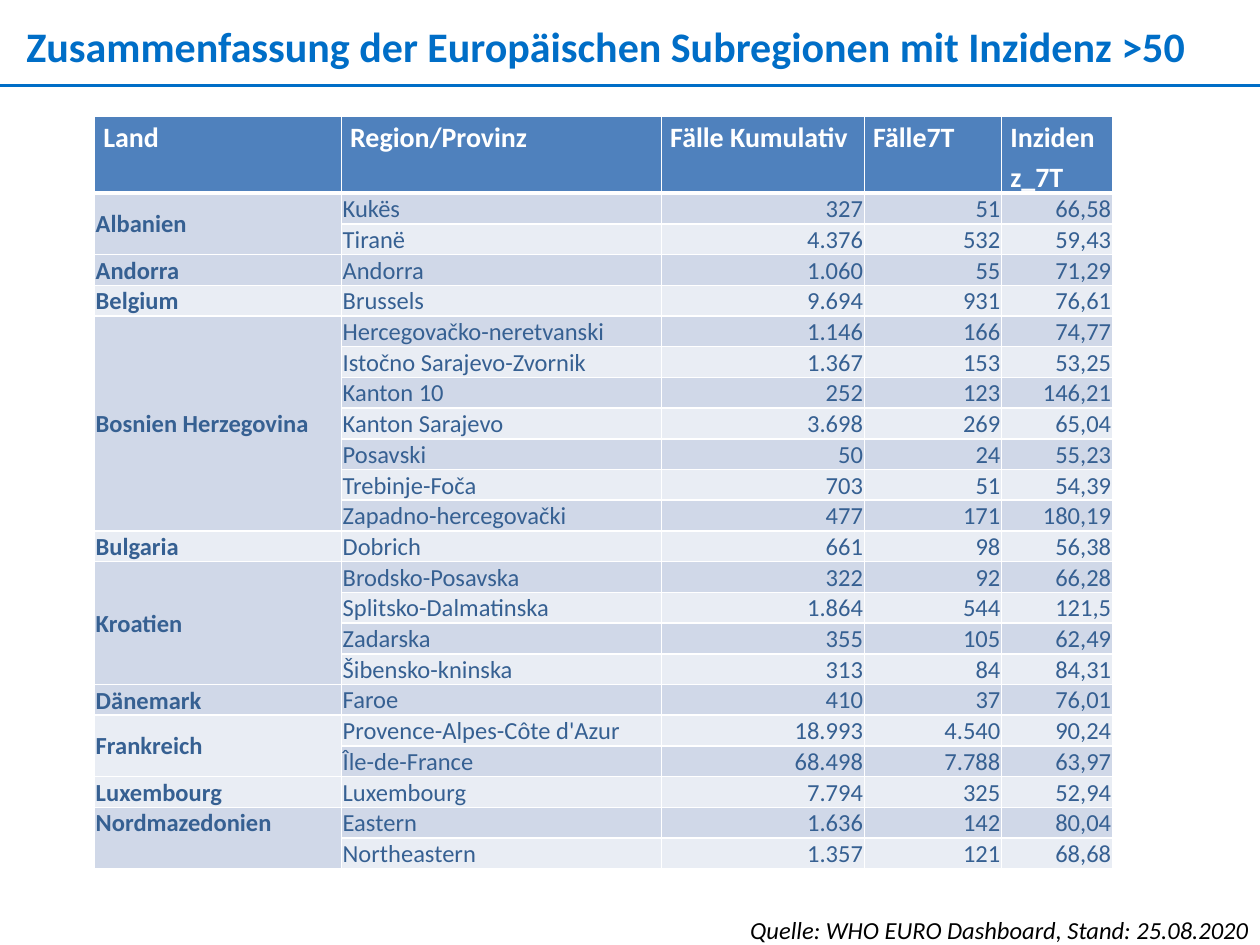
"""Build the slide listing European subregions with an incidence above 50."""
from lxml.etree import SubElement
from pptx import Presentation
from pptx.dml.color import RGBColor
from pptx.enum.shapes import MSO_CONNECTOR
from pptx.enum.text import MSO_ANCHOR, PP_ALIGN
from pptx.oxml import parse_xml
from pptx.oxml.ns import nsdecls, qn
from pptx.util import Inches, Pt

BLUE = RGBColor(0x00, 0x6E, 0xC7)
BLACK = RGBColor(0x00, 0x00, 0x00)
WHITE = RGBColor(0xFF, 0xFF, 0xFF)
HEAD = RGBColor(0x4F, 0x81, 0xBD)
INK = RGBColor(0x36, 0x60, 0x92)
BANDS = [RGBColor(0xE9, 0xED, 0xF4), RGBColor(0xD0, 0xD8, 0xE8)]

TITLES = ["Land", "Region/Provinz", "Fälle Kumulativ", "Fälle7T", "Inzidenz_7T"]
WIDTHS = [1.96, 2.54, 1.61, 1.09, 0.88]
LANDS = {
    "Albanien": [
        ("Kukës", "327", "51", "66,58"),
        ("Tiranë", "4.376", "532", "59,43"),
    ],
    "Andorra": [("Andorra", "1.060", "55", "71,29")],
    "Belgium": [("Brussels", "9.694", "931", "76,61")],
    "Bosnien Herzegovina": [
        ("Hercegovačko-neretvanski", "1.146", "166", "74,77"),
        ("Istočno Sarajevo-Zvornik", "1.367", "153", "53,25"),
        ("Kanton 10", "252", "123", "146,21"),
        ("Kanton Sarajevo", "3.698", "269", "65,04"),
        ("Posavski", "50", "24", "55,23"),
        ("Trebinje-Foča", "703", "51", "54,39"),
        ("Zapadno-hercegovački", "477", "171", "180,19"),
    ],
    "Bulgaria": [("Dobrich", "661", "98", "56,38")],
    "Kroatien": [
        ("Brodsko-Posavska", "322", "92", "66,28"),
        ("Splitsko-Dalmatinska", "1.864", "544", "121,5"),
        ("Zadarska", "355", "105", "62,49"),
        ("Šibensko-kninska", "313", "84", "84,31"),
    ],
    "Dänemark": [("Faroe", "410", "37", "76,01")],
    "Frankreich": [
        ("Provence-Alpes-Côte d'Azur", "18.993", "4.540", "90,24"),
        ("Île-de-France", "68.498", "7.788", "63,97"),
    ],
    "Luxembourg": [("Luxembourg", "7.794", "325", "52,94")],
    "Nordmazedonien": [
        ("Eastern", "1.636", "142", "80,04"),
        ("Northeastern", "1.357", "121", "68,68"),
    ],
}


def write(frame, text, size, color, align=PP_ALIGN.LEFT, **style):
    para = frame.paragraphs[0]
    para.alignment = align
    run = para.add_run()
    run.text = text
    run.font.color.rgb = color
    for key, value in {"name": "Calibri", "size": Pt(size), **style}.items():
        setattr(run.font, key, value)
    return para


def dress(cell, fill, pads, top=1, bottom=1):
    cell.fill.solid()
    cell.fill.fore_color.rgb = fill
    for side, pad in zip(("left", "top", "right", "bottom"), pads):
        setattr(cell, f"margin_{side}", Inches(pad))
    edges = {"lnL": 1, "lnR": 1, "lnT": top, "lnB": bottom}
    for spot, (tag, width) in enumerate(edges.items()):
        edge = parse_xml(
            f'<a:{tag} {nsdecls("a")} w="{Pt(width)}"><a:solidFill>'
            f'<a:srgbClr val="{WHITE}"/></a:solidFill></a:{tag}>'
        )
        cell._tc.get_or_add_tcPr().insert(spot, edge)


deck = Presentation()
deck.slide_width, deck.slide_height = Inches(10), Inches(7.5)
slide = deck.slides.add_slide(deck.slide_layouts[6])
shapes = slide.shapes

title = shapes.add_textbox(Inches(0.21), Inches(0.16), Inches(9.63), Inches(0.4)).text_frame
for key in ("margin_left", "margin_top", "margin_right", "margin_bottom"):
    setattr(title, key, 0)
title.word_wrap = True
write(title, "Zusammenfassung der Europäischen Subregionen mit Inzidenz >50", 24, BLUE, bold=True)

rule = shapes.add_connector(MSO_CONNECTOR.STRAIGHT, 0, Inches(0.68), Inches(10), Inches(0.68))
rule.line.color.rgb = BLUE
rule.line.width = Pt(1.5)
SubElement(rule._element.spPr, qn("a:effectLst"))

source = shapes.add_textbox(Inches(5.39), Inches(7.21), Inches(4.62), Inches(0.34)).text_frame
source.word_wrap = True
write(source, "Quelle: WHO EURO Dashboard, Stand: 25.08.2020", 14, BLACK, PP_ALIGN.RIGHT, italic=True)

count = 1 + sum(len(rows) for rows in LANDS.values())
grid = shapes.add_table(
    count, len(TITLES), Inches(0.75), Inches(0.92), Inches(sum(WIDTHS)), Inches(5.89)
).table
for col, width in zip(grid.columns, WIDTHS):
    col.width = Inches(width)
for index, row in enumerate(grid.rows):
    row.height = Inches(0.24 if index else 0.6)

for col, text in enumerate(TITLES):
    cell = grid.cell(0, col)
    dress(cell, HEAD, (0.07, 0, 0.07, 0), bottom=3)
    write(cell.text_frame, text, 16, WHITE, bold=True).line_spacing = 1.15

line = 1
for land, rows in LANDS.items():
    first = line
    for values in rows:
        for col, text in enumerate((land, *values)):
            cell = grid.cell(line, col)
            dress(cell, BANDS[line % 2], (0.01, 0.01, 0.01, 0), top=3 if line == 1 else 1)
            cell.vertical_anchor = MSO_ANCHOR.BOTTOM if col else MSO_ANCHOR.MIDDLE
            if col or line == first:
                align = PP_ALIGN.RIGHT if col > 1 else PP_ALIGN.LEFT
                write(cell.text_frame, text, 14, INK, align, bold=col == 0)
        line += 1
    if len(rows) > 1:
        grid.cell(first, 0).merge(grid.cell(line - 1, 0))
grid.cell(first, 0).vertical_anchor = MSO_ANCHOR.TOP

deck.save("out.pptx")
